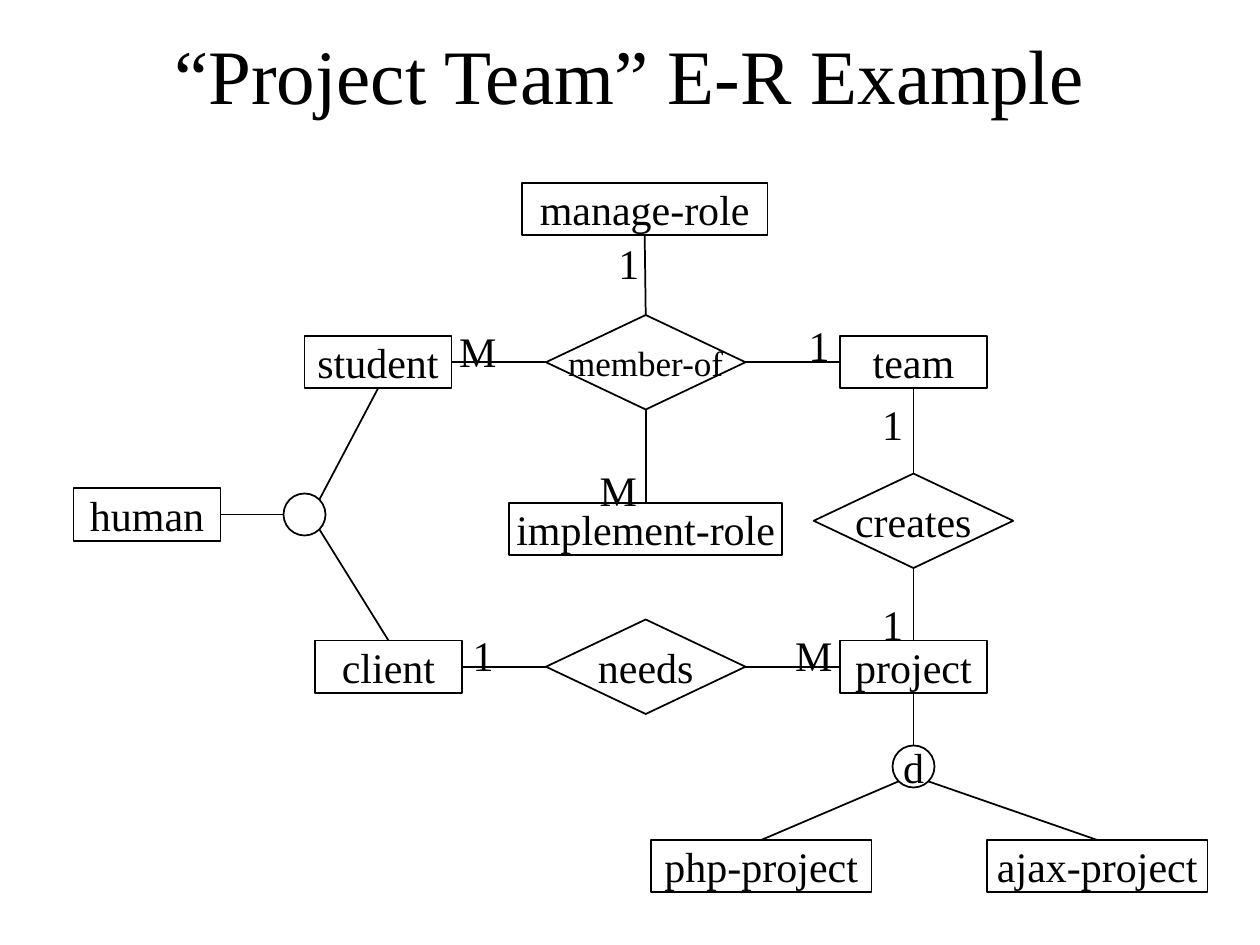
from lxml.etree import SubElement
from pptx import Presentation
from pptx.dml.color import RGBColor
from pptx.enum.shapes import MSO_CONNECTOR, MSO_SHAPE
from pptx.enum.text import MSO_ANCHOR, MSO_AUTO_SIZE, PP_ALIGN
from pptx.oxml.ns import qn
from pptx.util import Inches, Pt

COLORS = {"ink": "000000"}
FONT = "Times New Roman"
COLS, ROWS = 120, 90          # grid cells across 10 x 7.5 inches
CELL = Inches(10) / COLS
DIAGONAL = 0.354              # share of a circle's size from centre to its diagonal points

RECT, DIAMOND, CIRCLE = MSO_SHAPE.RECTANGLE, MSO_SHAPE.DIAMOND, MSO_SHAPE.OVAL
ENTITY, WIDE, RELATION, NODE = (14, 5), (21, 5), (19, 9), (4, 4)

# name: (kind, centre column, centre row, size, text, text size)
NODES = {
    "student": (RECT, 36, 34.5, ENTITY, "student", 24),
    "team": (RECT, 87, 34.5, ENTITY, "team", 24),
    "project": (RECT, 87, 63.5, ENTITY, "project", 24),
    "client": (RECT, 37, 63.5, ENTITY, "client", 24),
    "human": (RECT, 14, 49, ENTITY, "human", 24),
    "manage": (RECT, 61.4, 19.9, (23.4, 5), "manage-role", 24),
    "implement": (RECT, 61.5, 50.4, (26, 5), "implement-role", 24),
    "php": (RECT, 72.5, 82.5, WIDE, "php-project", 24),
    "ajax": (RECT, 104.5, 82.5, WIDE, "ajax-project", 24),
    "member": (DIAMOND, 61.5, 34.5, RELATION, "member-of", 20),
    "creates": (DIAMOND, 87, 49.6, RELATION, "creates", 24),
    "needs": (DIAMOND, 61.5, 63.5, RELATION, "needs", 24),
    "kinds of human": (CIRCLE, 29, 49, NODE, "", 24),
    "kinds of project": (CIRCLE, 87, 73, NODE, "d", 24),
}

SIDES = {
    "top": (0, -0.5), "bottom": (0, 0.5), "left": (-0.5, 0), "right": (0.5, 0),
    "upper right": (DIAGONAL, -DIAGONAL), "lower right": (DIAGONAL, DIAGONAL),
    "lower left": (-DIAGONAL, DIAGONAL),
}

LINKS = [
    ("member", "left", "student", "right"),
    ("member", "right", "team", "left"),
    ("member", "top", "manage", "bottom"),
    ("member", "bottom", "implement", "top"),
    ("team", "bottom", "creates", "top"),
    ("creates", "bottom", "project", "top"),
    ("client", "right", "needs", "left"),
    ("needs", "right", "project", "left"),
    ("human", "right", "kinds of human", "left"),
    ("kinds of human", "upper right", "student", "bottom"),
    ("kinds of human", "lower right", "client", "top"),
    ("project", "bottom", "kinds of project", "top"),
    ("kinds of project", "lower left", "php", "top"),
    ("kinds of project", "lower right", "ajax", "top"),
]

# text, left column, top row
CARDINALITIES = [
    ("1", 57.9, 21.7), ("1", 76, 29.5), ("M", 56.4, 43.3), ("M", 43, 30),
    ("1", 83, 37), ("1", 83, 56), ("1", 44, 59), ("M", 75, 59),
]


def cells(*values):
    return [round(v * CELL) for v in values]


def color(name):
    return RGBColor.from_string(COLORS[name])


def write(s, text, size=24, anchor=MSO_ANCHOR.MIDDLE, wrap=False,
          fit=MSO_AUTO_SIZE.NONE, top=0):
    tf = s.text_frame
    tf.word_wrap, tf.auto_size, tf.vertical_anchor = wrap, fit, anchor
    tf.margin_left = tf.margin_right = tf.margin_bottom = 0
    tf.margin_top = Inches(top)
    p = tf.paragraphs[0]
    p.alignment = PP_ALIGN.CENTER
    r = p.add_run()
    r.text = text
    r.font.name, r.font.size = FONT, Pt(size)
    r.font.color.rgb = color("ink")


def outline(s):
    s.line.color.rgb = color("ink")
    s.line.width = Pt(1)


def add_title(slide, text):
    s = slide.shapes.title
    s.left, s.top, s.width, s.height = cells(9, 3, 102, 8)
    write(s, text, size=44, wrap=True)


def add_node(slide, kind, x, y, size, text, text_size):
    w, h = size
    s = slide.shapes.add_shape(kind, *cells(x - w / 2, y - h / 2, w, h))
    s.shadow.inherit = False
    s.fill.background()
    outline(s)
    if text:
        write(s, text, size=text_size)


def side_point(name, side):
    _, x, y, (w, h), *_ = NODES[name]
    dx, dy = SIDES[side]
    return cells(x + dx * w, y + dy * h)


def add_link(slide, start, start_side, end, end_side):
    s = slide.shapes.add_connector(
        MSO_CONNECTOR.STRAIGHT, *side_point(start, start_side), *side_point(end, end_side))
    outline(s)
    SubElement(s._element.spPr, qn("a:effectLst"))


def add_cardinality(slide, text, x, y):
    width = 5 if text == "M" else 4
    s = slide.shapes.add_textbox(*cells(x, y, width, 4.8))
    write(s, text, anchor=MSO_ANCHOR.TOP, fit=MSO_AUTO_SIZE.SHAPE_TO_FIT_TEXT, top=0.08)


def main():
    prs = Presentation()
    prs.slide_width, prs.slide_height = cells(COLS, ROWS)
    slide = prs.slides.add_slide(prs.slide_layouts[5])
    add_title(slide, "“Project Team” E-R Example")
    for node in NODES.values():
        add_node(slide, *node)
    for link in LINKS:
        add_link(slide, *link)
    for cardinality in CARDINALITIES:
        add_cardinality(slide, *cardinality)
    prs.save("out.pptx")


if __name__ == "__main__":
    main()
